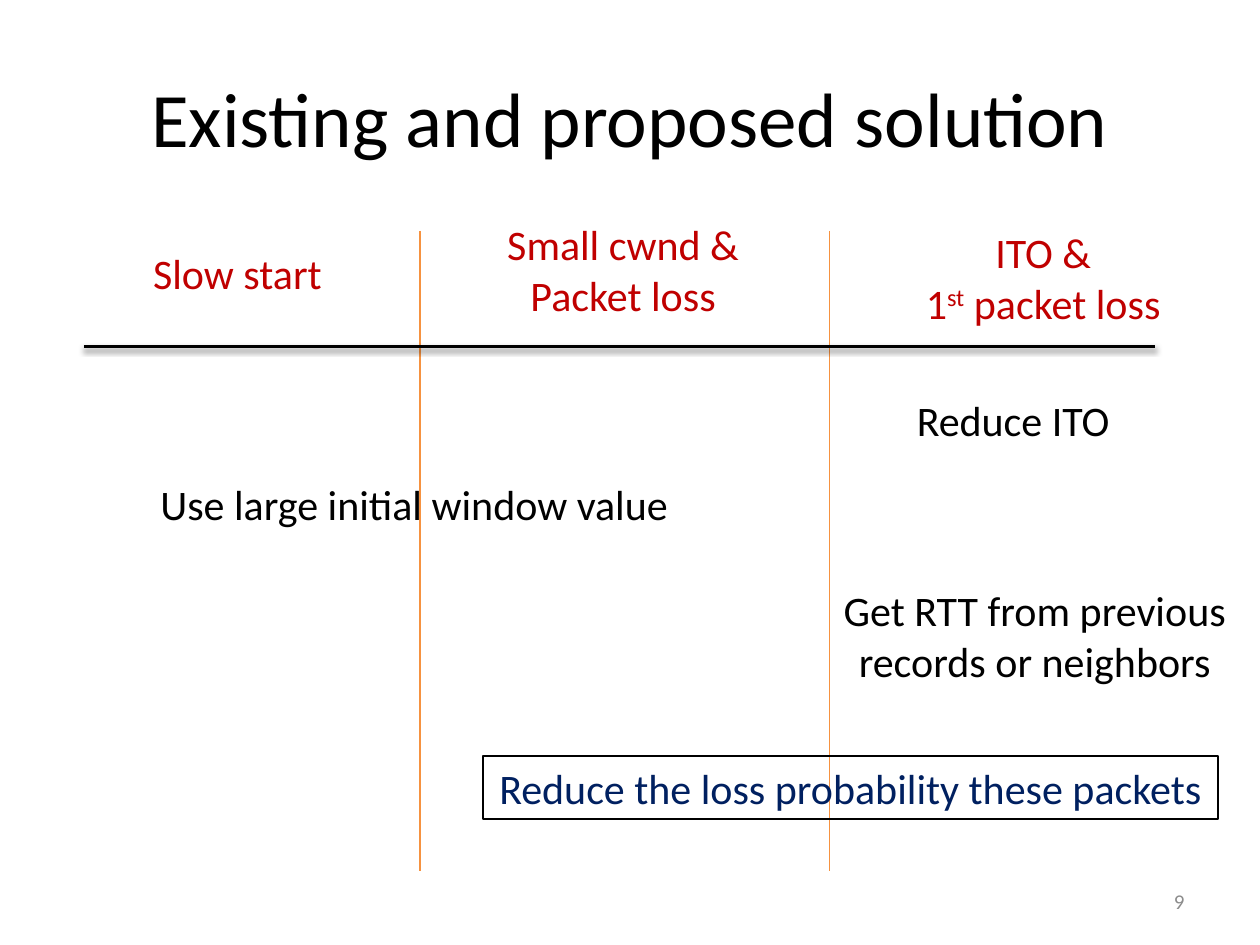
from dataclasses import dataclass
from typing import Optional

from lxml.etree import SubElement
from pptx import Presentation
from pptx.dml.color import RGBColor
from pptx.enum.shapes import MSO_CONNECTOR, MSO_SHAPE
from pptx.enum.text import MSO_ANCHOR as Anchor, MSO_AUTO_SIZE as AutoSize, PP_ALIGN as Align
from pptx.oxml.ns import qn
from pptx.util import Inches, Pt

COLUMNS, ROWS = 120, 90
WIDTH, HEIGHT = Inches(10), Inches(7.5)


@dataclass(frozen=True)
class Theme:
    font: str = "Calibri"
    ink: str = "000000"
    heading: str = "C00000"
    accent: str = "002060"
    divider: str = "F69240"
    muted: str = "8C8C8C"
    title_size: float = 44
    body_size: float = 24
    number_size: float = 12
    thin: float = 0.75
    thick: float = 2


THEME = Theme()


@dataclass(frozen=True)
class Label:
    column: float
    row: float
    columns: float
    rows: float
    lines: tuple[tuple[str, ...], ...]
    color: str = THEME.ink
    size: float = THEME.body_size
    align: Align = Align.CENTER
    fixed: bool = False
    border: Optional[str] = None


@dataclass(frozen=True)
class Rule:
    start: tuple[float, float]
    end: tuple[float, float]
    color: str
    weight: float
    shadow: bool = False


LABELS = (
    Label(6, 3.6, 108, 15, (("Existing and proposed solution",),),
          size=THEME.title_size, fixed=True),
    Label(13.4, 23, 18.6, 6, (("Slow start",),), THEME.heading, align=Align.LEFT),
    Label(47, 20.25, 24.7, 10.9, (("Small cwnd &",), ("Packet loss",)), THEME.heading),
    Label(86.75, 21, 25.2, 10.9, (("ITO &",), ("1", "st", " packet loss")), THEME.heading),
)
SOLUTIONS = (
    Label(86, 37, 21, 6, (("Reduce ITO",),)),
    Label(13.8, 45, 52.2, 6, (("Use large initial window value ",),)),
    Label(79, 55.1, 39.1, 10.9, (("Get RTT from previous",), ("records or neighbors",))),
    Label(46, 72, 70, 6, (("Reduce the loss probability these packets",),),
          THEME.accent, border=THEME.ink),
    Label(86, 83.4, 28, 4.8, (("9",),), THEME.muted, THEME.number_size,
          Align.RIGHT, fixed=True),
)
RULES = (
    Rule((40, 22), (40, 83), THEME.divider, THEME.thin),
    Rule((79, 22), (79, 83), THEME.divider, THEME.thin),
    Rule((8, 33), (110, 33), THEME.ink, THEME.thick, shadow=True),
)


def across(columns: float) -> int:
    return round(WIDTH * columns / COLUMNS)


def down(rows: float) -> int:
    return round(HEIGHT * rows / ROWS)


def draw_label(page, label: Label) -> None:
    place = (across(label.column), down(label.row), across(label.columns), down(label.rows))
    if label.border:
        box = page.shapes.add_shape(MSO_SHAPE.RECTANGLE, *place)
        box.shadow.inherit = False
        box.fill.background()
        box.line.color.rgb = RGBColor.from_string(label.border)
        box.line.width = Pt(THEME.thin)
    else:
        box = page.shapes.add_textbox(*place)
    frame = box.text_frame
    frame.word_wrap = label.fixed
    frame.auto_size = AutoSize.NONE if label.fixed else AutoSize.SHAPE_TO_FIT_TEXT
    frame.vertical_anchor = Anchor.MIDDLE if label.fixed else Anchor.TOP
    frame.text = "\n".join(spans[0] for spans in label.lines)
    for para, spans in zip(frame.paragraphs, label.lines):
        para.alignment = label.align
        for text in spans[1:]:
            para.add_run().text = text
        for index, span in enumerate(para.runs):
            span.font.name = THEME.font
            span.font.size = Pt(label.size)
            span.font.color.rgb = RGBColor.from_string(label.color)
            if index % 2:
                span.font._element.set("baseline", "30000")


def draw_rule(page, rule: Rule) -> None:
    line = page.shapes.add_connector(
        MSO_CONNECTOR.STRAIGHT,
        across(rule.start[0]), down(rule.start[1]), across(rule.end[0]), down(rule.end[1]))
    line.line.color.rgb = RGBColor.from_string(rule.color)
    line.line.width = Pt(rule.weight)
    effects = SubElement(line._element.spPr, qn("a:effectLst"))
    if rule.shadow:
        shadow = SubElement(effects, qn("a:outerShdw"), blurRad=str(Pt(3.1)),
                            dist=str(Pt(1.6)), dir="5400000", rotWithShape="0")
        color = SubElement(shadow, qn("a:srgbClr"), val=THEME.ink)
        SubElement(color, qn("a:alpha"), val="38000")


def main() -> None:
    deck = Presentation()
    deck.slide_width, deck.slide_height = WIDTH, HEIGHT
    page = deck.slides.add_slide(deck.slide_layouts[6])
    for label in LABELS:
        draw_label(page, label)
    for rule in RULES:
        draw_rule(page, rule)
    for label in SOLUTIONS:
        draw_label(page, label)
    deck.save("out.pptx")


if __name__ == "__main__":
    main()
